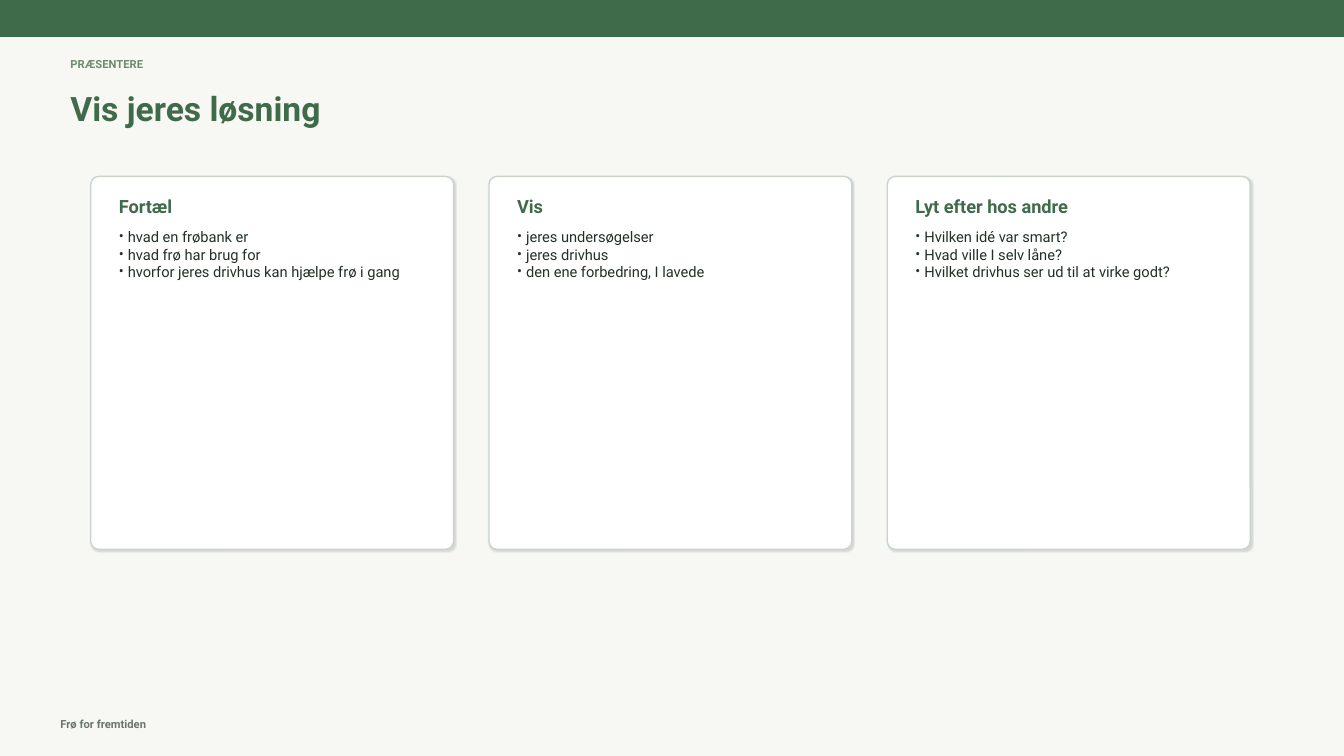
from lxml.etree import SubElement
from pptx import Presentation
from pptx.dml.color import RGBColor
from pptx.enum.shapes import MSO_SHAPE
from pptx.enum.text import MSO_ANCHOR
from pptx.oxml.ns import qn
from pptx.util import Inches, Pt

FONT = "Roboto"
GREEN = "406B4A"
CARD_LEFT, CARD_TOP = 0.9, 1.75
CARD_WIDTH, CARD_HEIGHT = 3.6, 3.7
CARD_GAP = 0.35
CARDS = [
    ("Fortæl", ["hvad en frøbank er", "hvad frø har brug for",
                "hvorfor jeres drivhus kan hjælpe frø i gang"]),
    ("Vis", ["jeres undersøgelser", "jeres drivhus",
             "den ene forbedring, I lavede"]),
    ("Lyt efter hos andre", ["Hvilken idé var smart?", "Hvad ville I selv låne?",
                             "Hvilket drivhus ser ud til at virke godt?"]),
]


def color(value):
    """Turn a hex string into a colour."""
    return RGBColor.from_string(value)


def add_panel(slide, kind, left, top, width, height, fill, line):
    """Add a filled, outlined shape without a shadow."""
    shape = slide.shapes.add_shape(
        kind, Inches(left), Inches(top), Inches(width), Inches(height))
    shape.shadow.inherit = False
    shape.fill.solid()
    shape.fill.fore_color.rgb = color(fill)
    shape.line.color.rgb = color(line)
    shape.line.width = Pt(1)
    return shape


def add_bullet(paragraph):
    """Give a paragraph a round bullet with a hanging indent."""
    properties = paragraph._p.get_or_add_pPr()
    indent = Inches(0.09)
    properties.set("marL", str(indent))
    properties.set("indent", str(-indent))
    SubElement(properties, qn("a:buFont"), typeface=FONT)
    SubElement(properties, qn("a:buChar"), char="•")


def add_text(slide, left, top, width, height, lines, size, fill,
             bold=True, bullets=False, anchor=MSO_ANCHOR.MIDDLE):
    """Add a text box with one paragraph per line."""
    box = slide.shapes.add_textbox(
        Inches(left), Inches(top), Inches(width), Inches(height))
    frame = box.text_frame
    frame.word_wrap = True
    frame.vertical_anchor = anchor
    for index, line in enumerate(lines):
        paragraph = frame.add_paragraph() if index else frame.paragraphs[0]
        if bullets:
            add_bullet(paragraph)
        run = paragraph.add_run()
        run.text = line
        run.font.name = FONT
        run.font.size = Pt(size)
        run.font.bold = bold
        run.font.color.rgb = color(fill)


def add_card_shadow(shape):
    """Add a soft shadow towards the lower right."""
    effects = shape._element.spPr.find(qn("a:effectLst"))
    shadow = SubElement(effects, qn("a:outerShdw"), blurRad=str(Pt(1)),
                        dist=str(Pt(1)), dir="2700000", algn="tl", rotWithShape="0")
    black = SubElement(shadow, qn("a:srgbClr"), val="000000")
    SubElement(black, qn("a:alpha"), val="12000")


def add_card(slide, left, top, width, height, heading, points):
    """Add a rounded card with a heading and bullet points."""
    card = add_panel(slide, MSO_SHAPE.ROUNDED_RECTANGLE, left, top, width, height,
                     "FFFFFF", "C8D5CB")
    card.adjustments[0] = 0.022
    add_card_shadow(card)
    text_left, text_width = left + 0.18, width - 0.36
    add_text(slide, text_left, top + 0.16, text_width, 0.28, [heading], 13, GREEN)
    add_text(slide, text_left, top + 0.46, text_width, height - 0.58, points, 10.5,
             "243026", bold=False, bullets=True, anchor=MSO_ANCHOR.TOP)


def add_frame(slide, width, height):
    """Add the background, top band and footer."""
    slide.background.fill.solid()
    slide.background.fill.fore_color.rgb = color("F7F8F4")
    add_panel(slide, MSO_SHAPE.RECTANGLE, 0, 0, width, 0.36, GREEN, GREEN)
    add_text(slide, 0.5, height - 0.42, 3.6, 0.2, ["Frø for fremtiden"], 8, "6A756D")


def add_header(slide, left, top):
    """Add the section label and the title."""
    add_text(slide, left, top, 3, 0.22, ["PRÆSENTERE"], 8, "6D8B70")
    add_text(slide, left, top + 0.34, 8.7, 0.42, ["Vis jeres løsning"], 24, GREEN)


def main():
    """Build and save the presentation."""
    presentation = Presentation()
    presentation.slide_width = Inches(13.33)
    presentation.slide_height = Inches(7.5)
    slide = presentation.slides.add_slide(presentation.slide_layouts[6])
    add_frame(slide, 13.33, 7.5)
    add_header(slide, 0.6, 0.52)
    for index, (heading, points) in enumerate(CARDS):
        left = CARD_LEFT + index * (CARD_WIDTH + CARD_GAP)
        add_card(slide, left, CARD_TOP, CARD_WIDTH, CARD_HEIGHT, heading, points)
    presentation.save("out.pptx")


if __name__ == "__main__":
    main()
